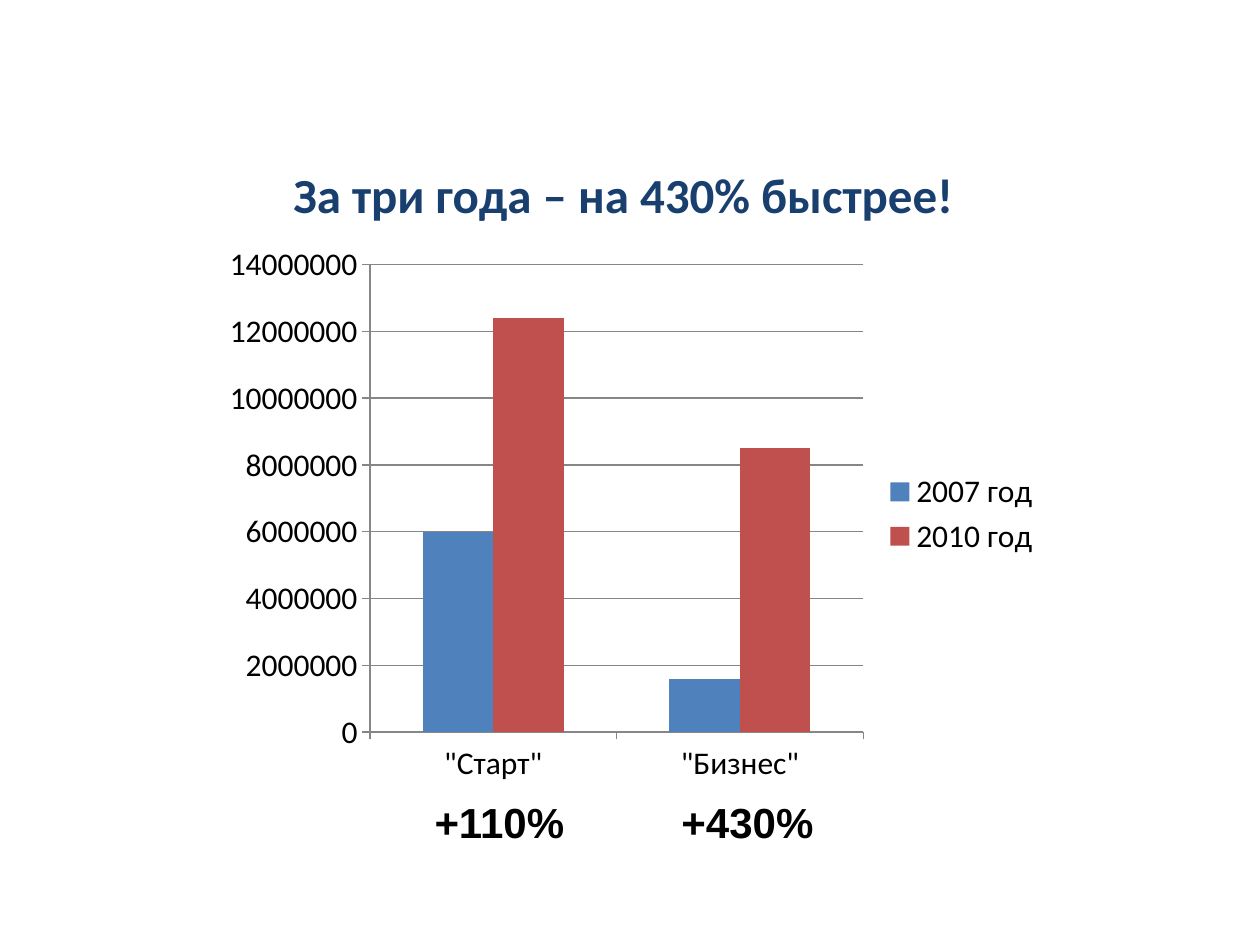
from pptx import Presentation
from pptx.chart.data import CategoryChartData
from pptx.dml.color import RGBColor
from pptx.enum.chart import XL_CHART_TYPE, XL_LEGEND_POSITION, XL_TICK_MARK
from pptx.enum.text import MSO_ANCHOR, PP_ALIGN
from pptx.util import Pt

NAVY = RGBColor(0x18, 0x3F, 0x6E)
BLACK = RGBColor(0, 0, 0)
GRAY = RGBColor(0x86, 0x86, 0x86)
BLUE = RGBColor(0x4F, 0x81, 0xBD)
RED = RGBColor(0xC0, 0x50, 0x4D)

TITLE = "За три года – на 430% быстрее!"
PLANS = ['"Старт"', '"Бизнес"']
YEARS = [
    ("2007 год", [6000000, 1600000], BLUE),
    ("2010 год", [12400000, 8500000], RED),
]
GROWTH = ["+110%", "+430%"]
GROWTH_LEFT, GROWTH_STEP = 241.2, 141.1

TITLE_FONT = {"name": "Calibri", "size": Pt(28), "bold": True}
CHART_FONT = {"name": "Calibri", "size": Pt(18)}
GROWTH_FONT = {"name": "Arial", "size": Pt(24), "bold": True}


def style_font(font, values, color):
    for key, value in values.items():
        setattr(font, key, value)
    font.color.rgb = color


def add_text(slide, text, box, values, color, align=PP_ALIGN.LEFT, anchor=MSO_ANCHOR.TOP):
    frame = slide.shapes.add_textbox(*map(Pt, box)).text_frame
    frame.word_wrap = True
    frame.vertical_anchor = anchor
    paragraph = frame.paragraphs[0]
    paragraph.alignment = align
    run = paragraph.add_run()
    run.text = text
    style_font(run.font, values, color)


def add_speed_chart(slide):
    data = CategoryChartData(number_format="General")
    data.categories = PLANS
    for year, speeds, _ in YEARS:
        data.add_series(year, speeds)
    chart = slide.shapes.add_chart(
        XL_CHART_TYPE.COLUMN_CLUSTERED, Pt(121.7), Pt(133.9), Pt(480.2), Pt(319.7), data
    ).chart
    style_font(chart.font, CHART_FONT, BLACK)
    chart.has_title = False
    chart.has_legend = True
    chart.legend.position = XL_LEGEND_POSITION.RIGHT
    chart.legend.include_in_layout = False

    plot = chart.plots[0]
    plot.gap_width = 150
    plot.overlap = 0
    plot.vary_by_categories = False
    for series, (_, _, color) in zip(plot.series, YEARS):
        series.format.fill.solid()
        series.format.fill.fore_color.rgb = color

    value_axis = chart.value_axis
    value_axis.minimum_scale = 0
    value_axis.maximum_scale = 14000000
    value_axis.major_unit = 2000000
    value_axis.has_major_gridlines = True
    for axis in (chart.category_axis, value_axis):
        axis.major_tick_mark = XL_TICK_MARK.OUTSIDE
    for part in (chart.category_axis, value_axis, value_axis.major_gridlines):
        part.format.line.color.rgb = GRAY
        part.format.line.width = Pt(0.75)


def main():
    prs = Presentation()
    prs.slide_width, prs.slide_height = Pt(720), Pt(540)
    slide = prs.slides.add_slide(prs.slide_layouts[6])
    add_text(slide, TITLE, (0, 77.8, 712.1, 66.2), TITLE_FONT, NAVY,
             PP_ALIGN.CENTER, MSO_ANCHOR.MIDDLE)
    add_speed_chart(slide)
    for i, growth in enumerate(GROWTH):
        box = (GROWTH_LEFT + i * GROWTH_STEP, 451.4, 102.2, 36)
        add_text(slide, growth, box, GROWTH_FONT, BLACK)
    prs.save("out.pptx")


if __name__ == "__main__":
    main()
